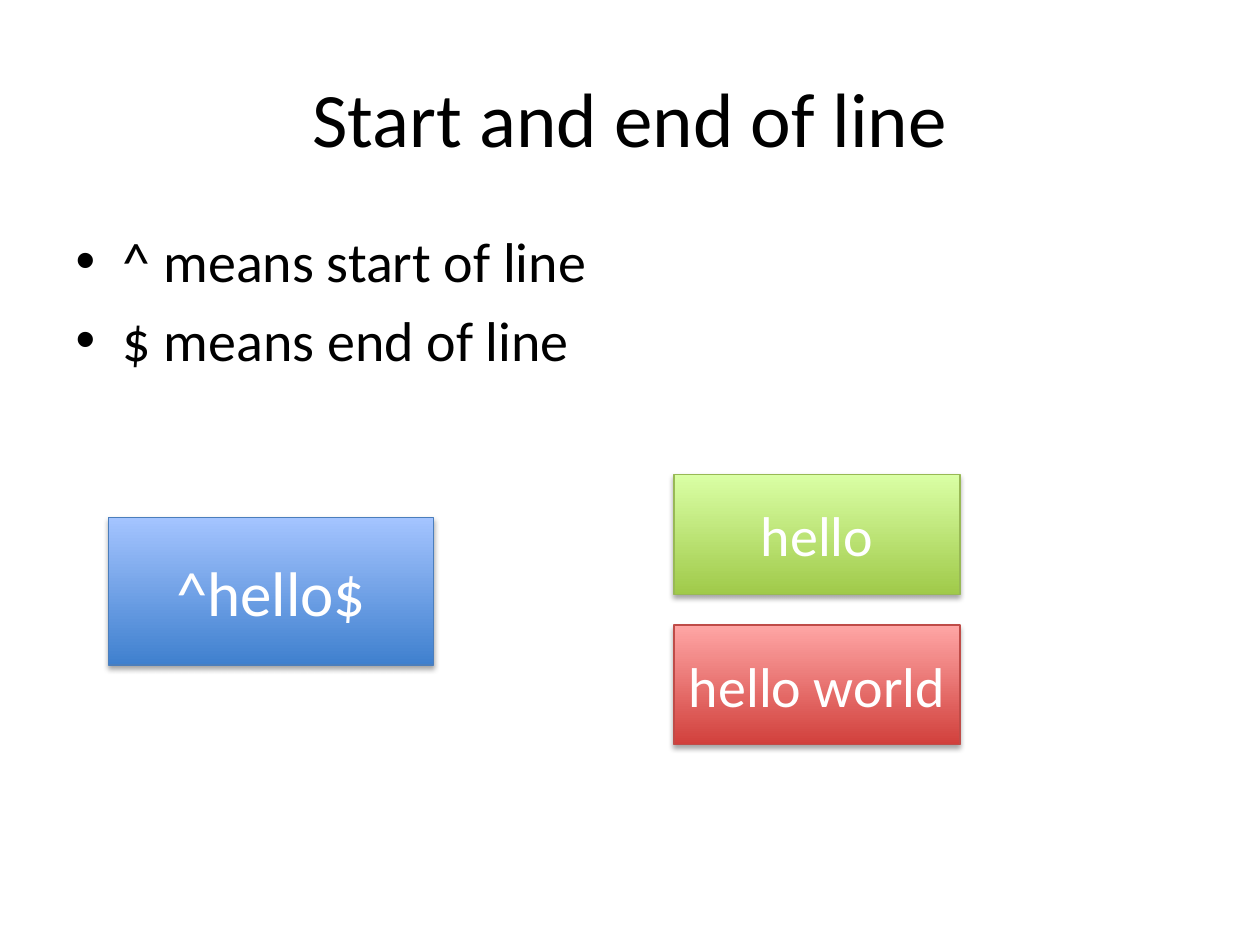
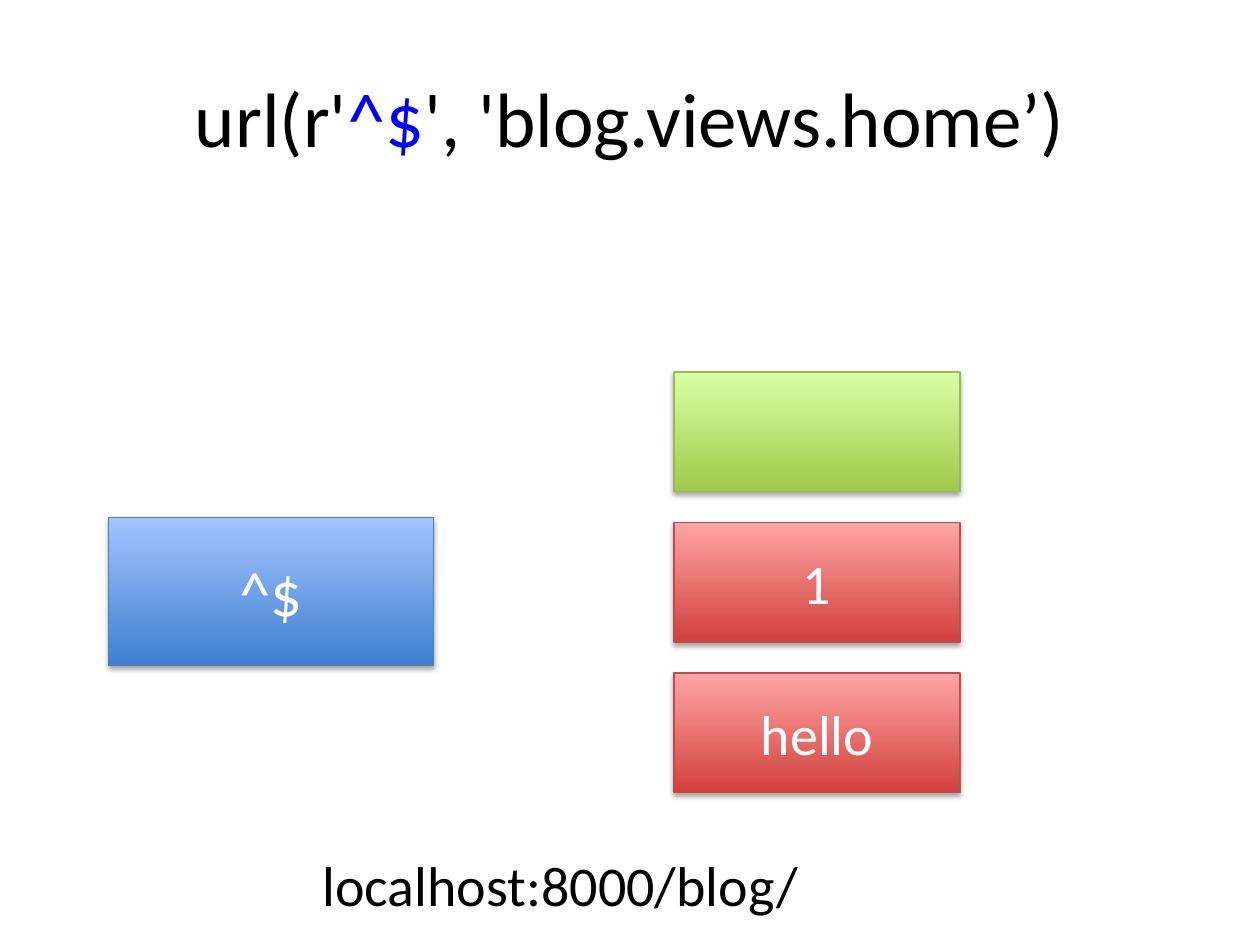
import pptx
import pptx.dml.color
import pptx.enum.shapes
import pptx.enum.text
import pptx.oxml
import pptx.oxml.ns
import pptx.util

Pt = pptx.util.Pt
RGBColor = pptx.dml.color.RGBColor
ALIGN = pptx.enum.text.PP_ALIGN
ANCHOR = pptx.enum.text.MSO_ANCHOR

FONT = "Calibri"
BLACK = RGBColor(0x00, 0x00, 0x00)
WHITE = RGBColor(0xFF, 0xFF, 0xFF)
HIGHLIGHT = RGBColor(0x00, 0x00, 0xFF)
BLUE = (RGBColor(0x3F, 0x80, 0xCE), RGBColor(0xA4, 0xC4, 0xFF), RGBColor(0x4B, 0x7E, 0xBC))
GREEN = (RGBColor(0xA0, 0xCA, 0x4A), RGBColor(0xDA, 0xFF, 0xA5), RGBColor(0x98, 0xB9, 0x55))
RED = (RGBColor(0xD1, 0x40, 0x3C), RGBColor(0xFF, 0xA6, 0xA5), RGBColor(0xBF, 0x4C, 0x48))

TITLE_BOX = (36, 21.6, 648, 90)
PATTERN_BOX = (61.9, 295.9, 185.8, 84.2)
CANDIDATE_LEFT, CANDIDATE_WIDTH, CANDIDATE_HEIGHT = 385.2, 163.4, 68.4
CANDIDATE_PITCH = 86

SHADOW = (
    f'<a:outerShdw {pptx.oxml.ns.nsdecls("a")} blurRad="{Pt(3.1)}" dist="{Pt(1.8)}" '
    'dir="5400000" rotWithShape="0"><a:srgbClr val="000000">'
    '<a:alpha val="35000"/></a:srgbClr></a:outerShdw>'
)


def points(box):
    """Turn the numbers of a box into point lengths."""
    return [Pt(length) for length in box]


def place(placeholder, box):
    """Move a placeholder to a box."""
    placeholder.left, placeholder.top, placeholder.width, placeholder.height = points(box)


def add_run(paragraph, text, size, color=BLACK):
    """Append one formatted run to a paragraph."""
    run = paragraph.add_run()
    run.text = text
    run.font.name, run.font.size = FONT, Pt(size)
    run.font.color.rgb = color


def write_title(slide, box, parts):
    """Write the centred slide title from (text, color) parts."""
    title = slide.shapes.title
    place(title, box)
    title.text_frame.vertical_anchor = ANCHOR.MIDDLE
    heading = title.text_frame.paragraphs[0]
    heading.alignment = ALIGN.CENTER
    for text, color in parts:
        add_run(heading, text, 44, color)


def write_rules(slide, box, rules):
    """Write the bulleted rules in the body placeholder."""
    body = slide.placeholders[1]
    place(body, box)
    frame = body.text_frame
    for index, rule in enumerate(rules):
        paragraph = frame.add_paragraph() if index else frame.paragraphs[0]
        paragraph.space_before = Pt(6.4 if index else 0)
        add_run(paragraph, rule, 32)


def add_card(slide, box, text, size, palette):
    """Draw a shaded rectangle with a centred label."""
    card = slide.shapes.add_shape(pptx.enum.shapes.MSO_SHAPE.RECTANGLE, *points(box))
    bottom, top, outline = palette
    card.fill.gradient()
    card.fill.gradient_angle = 90
    for stop, color in zip(card.fill.gradient_stops, (bottom, top)):
        stop.color.rgb = color
    card.line.color.rgb = outline
    card.line.width = Pt(0.75)
    card.shadow.inherit = False
    effects = card._element.spPr.find(pptx.oxml.ns.qn("a:effectLst"))
    effects.append(pptx.oxml.parse_xml(SHADOW))
    if text:
        frame = card.text_frame
        frame.word_wrap = True
        frame.vertical_anchor = ANCHOR.MIDDLE
        label = frame.paragraphs[0]
        label.alignment = ALIGN.CENTER
        add_run(label, text, size, WHITE)


def add_candidates(slide, top, candidates):
    """Stack the matching and failing strings from a top edge down."""
    for row, (text, palette) in enumerate(candidates):
        box = (CANDIDATE_LEFT, top + row * CANDIDATE_PITCH, CANDIDATE_WIDTH, CANDIDATE_HEIGHT)
        add_card(slide, box, text, 32, palette)


def add_address(slide, box, address):
    """Write the web address under the cards."""
    frame = slide.shapes.add_textbox(*points(box)).text_frame
    frame.word_wrap = True
    frame.auto_size = pptx.enum.text.MSO_AUTO_SIZE.SHAPE_TO_FIT_TEXT
    add_run(frame.paragraphs[0], address, 32)


def build_anchor_slide(deck):
    """Explain the start and end anchors."""
    slide = deck.slides.add_slide(deck.slide_layouts[1])
    write_title(slide, TITLE_BOX, [("Start and end of line", BLACK)])
    write_rules(slide, (36, 126, 648, 120), ["^ means start of line", "$ means end of line"])
    add_card(slide, PATTERN_BOX, "^hello$", 36, BLUE)
    add_candidates(slide, 271.2, [("hello", GREEN), ("hello world", RED)])


def build_url_slide(deck):
    """Show the empty pattern in a URL rule."""
    slide = deck.slides.add_slide(deck.slide_layouts[5])
    write_title(slide, TITLE_BOX, [
        ("url(r'", BLACK), ("^$", HIGHLIGHT), ("', 'blog.views.home’)", BLACK)])
    add_card(slide, PATTERN_BOX, "^$", 36, BLUE)
    add_candidates(slide, 212.5, [("", GREEN), ("1", RED), ("hello", RED)])
    add_address(slide, (177.1, 482.4, 393.1, 46), "localhost:8000/blog/")


def main():
    """Build and save the deck."""
    deck = pptx.Presentation()
    deck.slide_width, deck.slide_height = Pt(720), Pt(540)
    build_anchor_slide(deck)
    build_url_slide(deck)
    deck.save("out.pptx")


if __name__ == "__main__":
    main()
